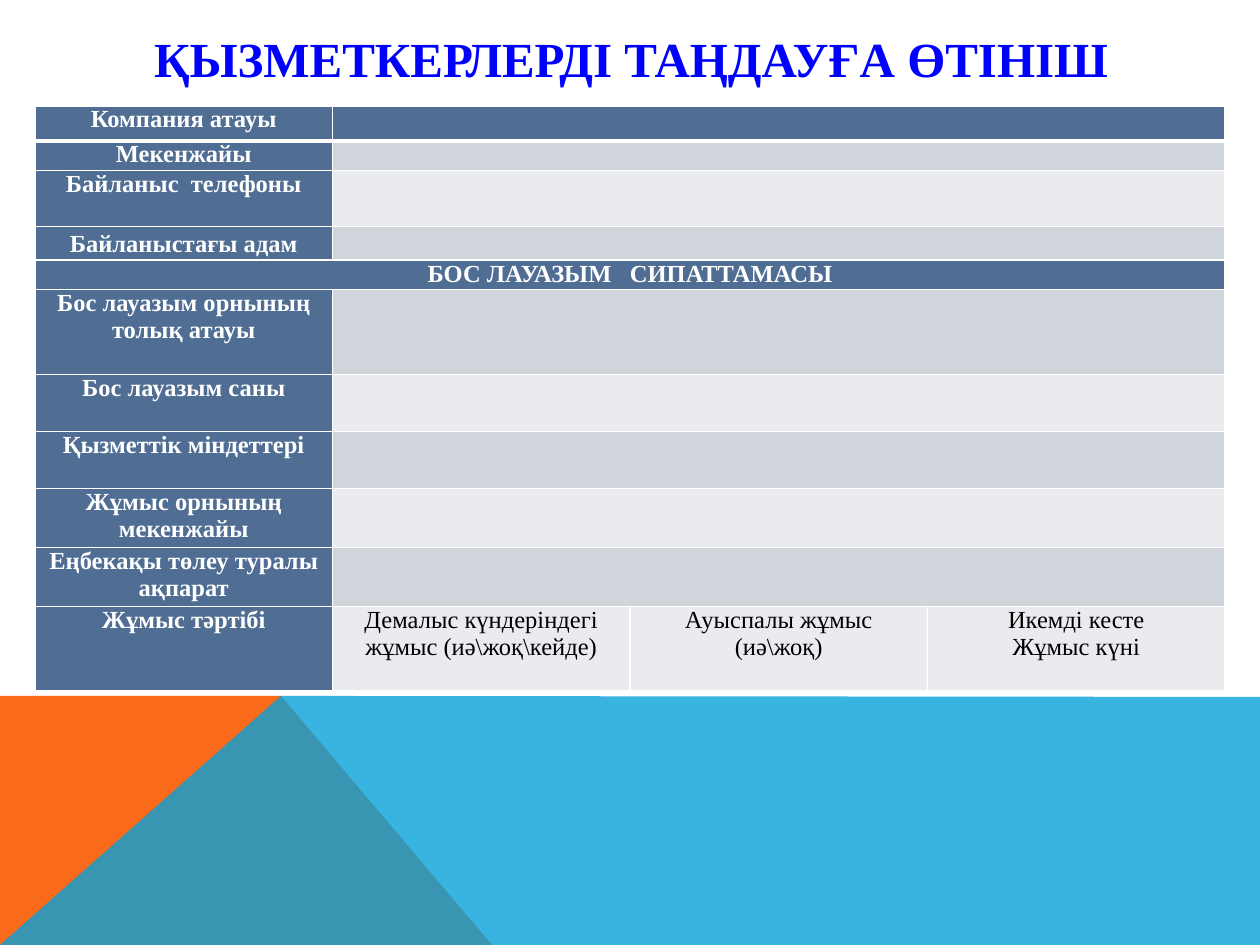
from dataclasses import dataclass

from lxml.etree import SubElement
from pptx import Presentation
from pptx.dml.color import RGBColor
from pptx.enum.text import MSO_ANCHOR as Anchor, PP_ALIGN as Align
from pptx.oxml.ns import qn
from pptx.util import Pt

EMU_PER_PX = 914400 / 126


@dataclass(frozen=True)
class Theme:
    font: str = "Times New Roman"
    title_size: int = 28
    cell_size: int = 14
    title: str = "0000FF"
    label: str = "506E94"
    bands: tuple = ("D0D5DC", "E9EBEE")
    white: str = "FFFFFF"
    black: str = "000000"
    orange: str = "F96A1B"
    blue: str = "08A1D9"
    blue_alpha: int = 80


THEME = Theme()
COLUMNS = 4
SECTION = "БОС ЛАУАЗЫМ   СИПАТТАМАСЫ"
# label, row height in px, answers
ROWS = [
    ("Компания атауы", 35, []),
    ("Мекенжайы", 28, []),
    ("Байланыс  телефоны", 56, []),
    ("Байланыстағы адам", 32, []),
    (SECTION, 28, []),
    ("Бос лауазым орнының толық атауы", 85, []),
    ("Бос лауазым саны", 57, []),
    ("Қызметтік міндеттері", 57, []),
    ("Жұмыс орнының мекенжайы", 57, []),
    ("Еңбекақы төлеу туралы ақпарат", 57, []),
    ("Жұмыс тәртібі", 84, [
        "Демалыс күндеріндегі жұмыс (иә\\жоқ\\кейде)",
        "Ауыспалы жұмыс (иә\\жоқ)",
        "Икемді кесте\nЖұмыс күні",
    ]),
]


def px(length):
    return round(length * EMU_PER_PX)


def rgb(color):
    return RGBColor.from_string(color)


def write_text(frame, text, *, size, color, bold=False, spacing=None):
    """Fill a text frame with centred paragraphs, one for each line."""
    frame.word_wrap = True
    frame.text = text
    for paragraph in frame.paragraphs:
        paragraph.alignment = Align.CENTER
        if spacing:
            paragraph.line_spacing = spacing
        for run in paragraph.runs:
            font = run.font
            font.name, font.size, font.bold = THEME.font, Pt(size), bold
            font.color.rgb = rgb(color)
        if not paragraph.runs:
            SubElement(paragraph._p, qn("a:endParaRPr"), sz=str(size * 100))


def add_title(slide, left, top, width, height):
    box = slide.shapes.add_textbox(px(left), px(top), px(width), px(height))
    box.text_frame.vertical_anchor = Anchor.MIDDLE
    write_text(box.text_frame, "ҚЫЗМЕТКЕРЛЕРДІ ТАҢДАУҒА ӨТІНІШ",
               size=THEME.title_size, color=THEME.title, bold=True)


def add_polygon(slide, points, color, alpha=None):
    start, *others = [(px(x), px(y)) for x, y in points]
    builder = slide.shapes.build_freeform(*start)
    builder.add_line_segments(others, close=True)
    shape = builder.convert_to_shape()
    shape.shadow.inherit = False
    shape.line.fill.background()
    shape.fill.solid()
    shape.fill.fore_color.rgb = rgb(color)
    if alpha:
        color_node = shape._element.spPr.find(qn("a:solidFill"))[0]
        SubElement(color_node, qn("a:alpha"), val=str(alpha * 1000))


def add_footer(slide, left, top, width, height):
    right, bottom, peak = left + width, top + height, left + 281
    add_polygon(slide, [(left, bottom), (left, top), (peak, top),
                        (left + 492, bottom)], THEME.orange)
    add_polygon(slide, [(left, bottom), (peak, top), (right, top + 1),
                        (right, bottom)], THEME.blue, THEME.blue_alpha)


def style_cell(cell, fill, *, top=1, bottom=1):
    """Set insets, white borders (widths in points) and fill."""
    cell.margin_left = cell.margin_right = px(8)
    cell.margin_top = cell.margin_bottom = 0
    properties = cell._tc.get_or_add_tcPr()
    for side, width in (("L", 1), ("R", 1), ("T", top), ("B", bottom)):
        line = SubElement(properties, qn(f"a:ln{side}"), w=str(Pt(width)))
        solid = SubElement(line, qn("a:solidFill"))
        SubElement(solid, qn("a:srgbClr"), val=THEME.white)
    cell.fill.solid()
    cell.fill.fore_color.rgb = rgb(fill)


def add_form(slide, left, top, width):
    height = sum(row_height for _, row_height, _ in ROWS)
    table = slide.shapes.add_table(len(ROWS), COLUMNS, px(left), px(top),
                                   px(width), px(height)).table
    for column in table.columns:
        column.width = px(width / COLUMNS)
    for index, (label, row_height, answers) in enumerate(ROWS):
        table.rows[index].height = px(row_height)
        cells = [table.cell(index, column) for column in range(COLUMNS)]
        dark_row = index == 0 or label == SECTION
        band = THEME.label if dark_row else THEME.bands[(index + 1) % 2]
        if label == SECTION:
            cells[0].merge(cells[-1])
        elif not answers:
            cells[1].merge(cells[-1])
        texts = [label, *answers] + [""] * (COLUMNS - 1 - len(answers))
        for column, (cell, text) in enumerate(zip(cells, texts)):
            is_label = column == 0
            style_cell(cell, THEME.label if is_label else band,
                       top=3 if index == 1 else 1,
                       bottom=3 if index == 0 else 1)
            write_text(cell.text_frame, text, size=THEME.cell_size,
                       color=THEME.white if is_label else THEME.black,
                       bold=is_label,
                       spacing=1.15 if label == "Байланыстағы адам" else None)


def main():
    presentation = Presentation()
    presentation.slide_width, presentation.slide_height = px(1260), px(945)
    slide = presentation.slides.add_slide(presentation.slide_layouts[6])
    add_footer(slide, 0, 696, 1260, 249)
    add_title(slide, 113, 20, 1036, 76)
    add_form(slide, 35, 106, 1190)
    presentation.save("out.pptx")


if __name__ == "__main__":
    main()
